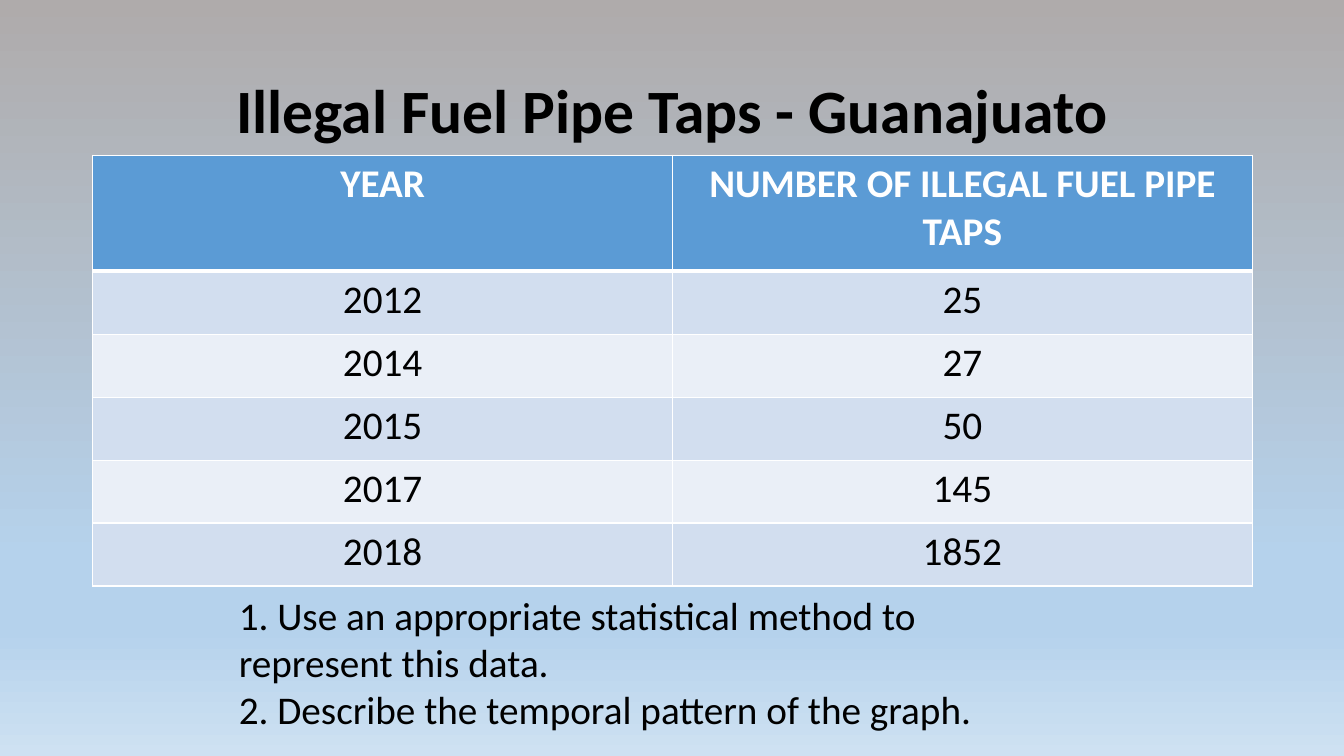
from lxml.etree import SubElement
from pptx import Presentation
from pptx.dml.color import RGBColor
from pptx.enum.text import MSO_ANCHOR, MSO_AUTO_SIZE, PP_ALIGN
from pptx.oxml import parse_xml
from pptx.oxml.ns import nsdecls, qn
from pptx.util import Inches, Pt

BLACK, WHITE = "000000", "FFFFFF"
HEADER_BLUE = "5B9BD5"
BANDS = ("D2DEEF", "EAEFF7")
SKY_STOPS = ((0, "AFABAB"), (74, "B5D2EC"), (83, "B5D2EC"), (100, "CEE1F2"))
TAPS_BY_YEAR = (
    ("YEAR", "NUMBER OF ILLEGAL FUEL PIPE TAPS"),
    ("2012", "25"),
    ("2014", "27"),
    ("2015", "50"),
    ("2017", "145"),
    ("2018", "1852"),
)
TASKS = (
    "1. Use an appropriate statistical method to represent this data.",
    "2. Describe the temporal pattern of the graph.",
)


def rgb(value):
    return RGBColor.from_string(value)


def format_text(frame, size, color=BLACK, bold=False, align=PP_ALIGN.LEFT):
    for paragraph in frame.paragraphs:
        paragraph.alignment = align
        for run in paragraph.runs:
            run.font.name = "Calibri"
            run.font.size = Pt(size)
            run.font.bold = bold
            run.font.color.rgb = rgb(color)


def paint_background(slide):
    fill = slide.background.fill
    fill.gradient()
    fill.gradient_angle = 270
    stops = fill.gradient_stops
    first_stop = slide._element.find(".//" + qn("a:gs"))
    stop_list = first_stop.getparent()
    for _ in range(len(SKY_STOPS) - len(stops)):
        stop_list.append(parse_xml(
            f'<a:gs {nsdecls("a")} pos="0"><a:srgbClr val="{WHITE}"/></a:gs>'))
    for stop, (percent, color) in zip(fill.gradient_stops, SKY_STOPS):
        stop.position = percent / 100
        stop.color.rgb = rgb(color)


def add_title(slide, text):
    title = slide.shapes.title
    title.left, title.top = Inches(0.92), Inches(0.4)
    title.width, title.height = Inches(11.5), Inches(1.45)
    frame = title.text_frame
    frame.text = text
    frame.vertical_anchor = MSO_ANCHOR.MIDDLE
    frame.paragraphs[0].line_spacing = 0.9
    format_text(frame, 44, bold=True, align=PP_ALIGN.CENTER)


def set_borders(cell, top, bottom):
    properties = cell._tc.get_or_add_tcPr()
    widths = (("a:lnL", 1), ("a:lnR", 1), ("a:lnT", top), ("a:lnB", bottom))
    for index, (tag, width) in enumerate(widths):
        border = SubElement(properties, qn(tag), w=str(Pt(width)))
        SubElement(SubElement(border, qn("a:solidFill")), qn("a:srgbClr"), val=WHITE)
        properties.insert(index, border)


def add_taps_table(slide):
    table = slide.shapes.add_table(
        len(TAPS_BY_YEAR), 2, Inches(0.92), Inches(1.54), Inches(11.5), Inches(4.28)
    ).table
    for row_index, values in enumerate(TAPS_BY_YEAR):
        header = row_index == 0
        table.rows[row_index].height = Inches(1.15 if header else 0.625)
        for column, value in enumerate(values):
            cell = table.cell(row_index, column)
            cell.text_frame.text = value
            cell.fill.solid()
            cell.fill.fore_color.rgb = rgb(HEADER_BLUE if header else BANDS[(row_index - 1) % 2])
            set_borders(cell, 3 if row_index == 1 else 1, 3 if header else 1)
            format_text(cell.text_frame, 28, WHITE if header else BLACK, header, PP_ALIGN.CENTER)


def add_tasks(slide):
    frame = slide.shapes.add_textbox(
        Inches(2.27), Inches(5.82), Inches(8.13), Inches(1.51)
    ).text_frame
    frame.word_wrap = True
    frame.auto_size = MSO_AUTO_SIZE.SHAPE_TO_FIT_TEXT
    frame.text = "\n".join(TASKS)
    format_text(frame, 28)


def main():
    """Build the slide on illegal fuel pipe taps in Guanajuato."""
    presentation = Presentation()
    presentation.slide_width = Inches(13.33)
    presentation.slide_height = Inches(7.5)
    slide = presentation.slides.add_slide(presentation.slide_layouts[5])
    paint_background(slide)
    add_title(slide, "Illegal Fuel Pipe Taps - Guanajuato")
    add_taps_table(slide)
    add_tasks(slide)
    presentation.save("out.pptx")


if __name__ == "__main__":
    main()
